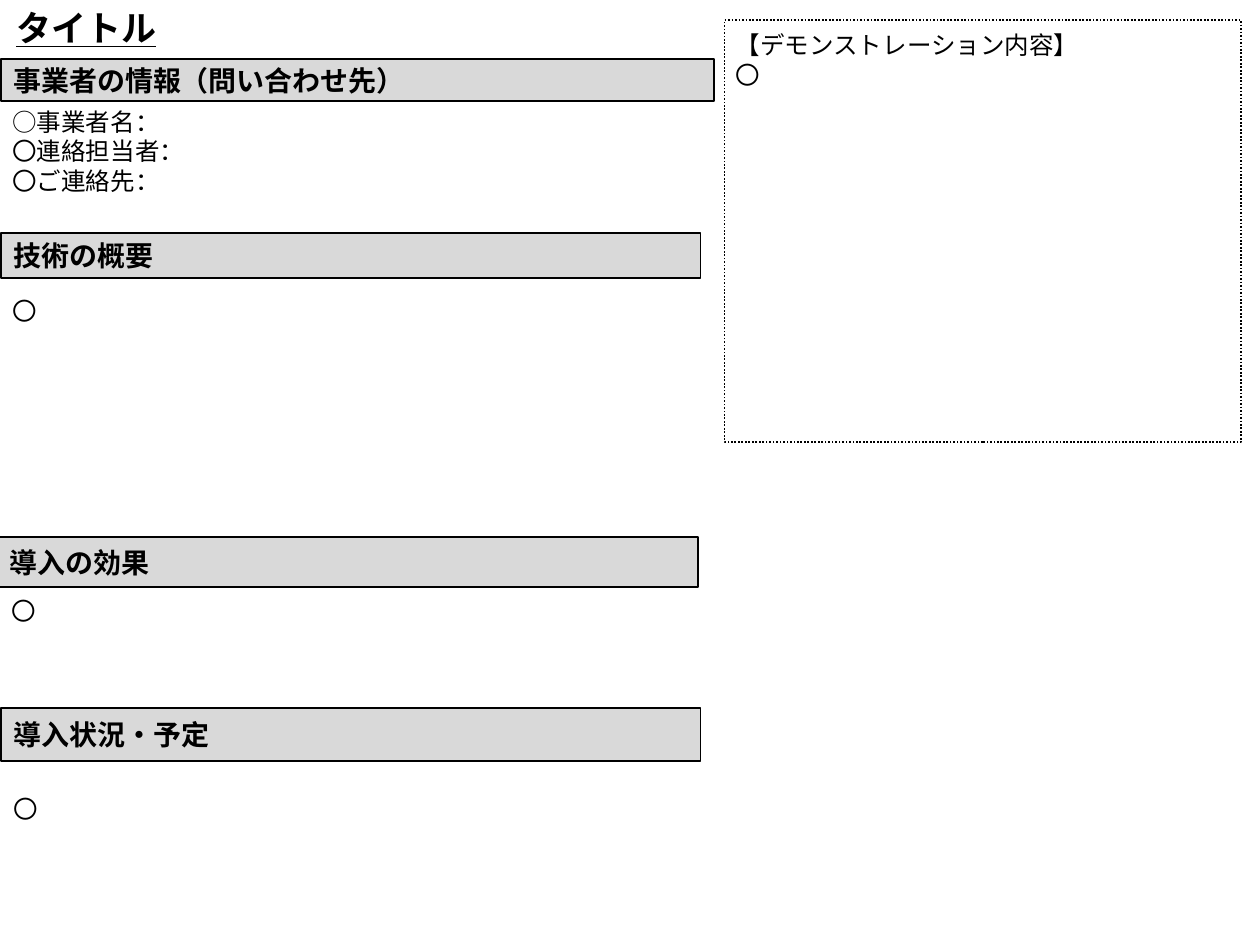
from lxml import etree
from pptx import Presentation
from pptx.dml.color import RGBColor
from pptx.enum import dml, shapes, text
from pptx.oxml import ns
from pptx.util import Pt

BLACK = RGBColor(0x00, 0x00, 0x00)
BAND_GREY = RGBColor(0xD9, 0xD9, 0xD9)
FONT = "Noto Sans CJK JP"
BODY = {"size": Pt(14)}
HEADING = {"size": Pt(16), "bold": True}
TITLE = {"size": Pt(20), "bold": True, "underline": True}
BULLET = "〇\u3000".replace("\u3000", "　")

# heading, its box, body lines, their box, hanging indent (all in points)
SECTIONS = [
    ("事業者の情報（問い合わせ先）", (0.7, 33.8, 407.5, 23.8),
     ["○事業者名：", "〇連絡担当者：", "〇ご連絡先："], (0, 57.6, 360, 58.3), 0),
    ("技術の概要", (0.7, 133.2, 399.6, 25.9),
     ["〇　"], (0, 165.6, 357.8, 24.5), 0),
    ("導入の効果", (-1.4, 306.7, 400.3, 28.8),
     ["〇　"], (-0.7, 337, 389.5, 24.5), 8.6),
    ("導入状況・予定", (0.7, 404.6, 399.6, 30.2),
     ["〇　"], (0.7, 450, 398.9, 24.5), 13.7),
]


def points(box):
    return [Pt(length) for length in box]


def write_lines(frame, lines, style, hanging=0):
    """Write one paragraph per line; bullet lines may hang by some points."""
    frame.word_wrap = True
    for index, line in enumerate(lines):
        paragraph = frame.add_paragraph() if index else frame.paragraphs[0]
        paragraph.alignment = text.PP_ALIGN.LEFT
        if hanging and line.startswith("〇"):
            properties = paragraph._p.get_or_add_pPr()
            properties.set("marL", str(Pt(hanging)))
            properties.set("indent", str(-Pt(hanging)))
        run = paragraph.add_run()
        run.text = line
        for name, value in {"name": FONT, **style}.items():
            setattr(run.font, name, value)
        run.font.color.rgb = BLACK
        east_asian = etree.SubElement(run._r.get_or_add_rPr(), ns.qn("a:ea"))
        east_asian.set("typeface", FONT)


def add_lines(slide, box, lines, style, hanging=0):
    frame = slide.shapes.add_textbox(*points(box)).text_frame
    write_lines(frame, lines, style, hanging)
    frame.auto_size = text.MSO_AUTO_SIZE.SHAPE_TO_FIT_TEXT


def add_outlined_box(slide, box):
    outlined = slide.shapes.add_shape(shapes.MSO_SHAPE.RECTANGLE, *points(box))
    outlined.shadow.inherit = False
    outlined.fill.background()
    outlined.line.color.rgb = BLACK
    outlined.line.width = Pt(1)
    return outlined


def add_section(slide, heading, heading_box, lines, lines_box, hanging):
    band = add_outlined_box(slide, heading_box)
    band.fill.solid()
    band.fill.fore_color.rgb = BAND_GREY
    band.text_frame.vertical_anchor = text.MSO_ANCHOR.MIDDLE
    write_lines(band.text_frame, [heading], HEADING)
    add_lines(slide, lines_box, lines, BODY, hanging)


def add_demonstration(slide, left, top, width, height):
    border = add_outlined_box(slide, (left, top, width, height))
    border.line.dash_style = dml.MSO_LINE.ROUND_DOT
    add_lines(slide, (left - 0.7, top + 2.2, width + 0.7, 41),
              ["【デモンストレーション内容】", "〇　"], BODY, 8.6)


def main():
    deck = Presentation()
    deck.slide_width, deck.slide_height = Pt(720), Pt(540)
    slide = deck.slides.add_slide(deck.slide_layouts[6])
    for section in SECTIONS:
        add_section(slide, *section)
    add_demonstration(slide, 414, 11.5, 295.2, 241.2)
    add_lines(slide, (2.2, 0, 716.4, 31.7), ["タイトル"], TITLE)
    deck.save("out.pptx")


if __name__ == "__main__":
    main()
